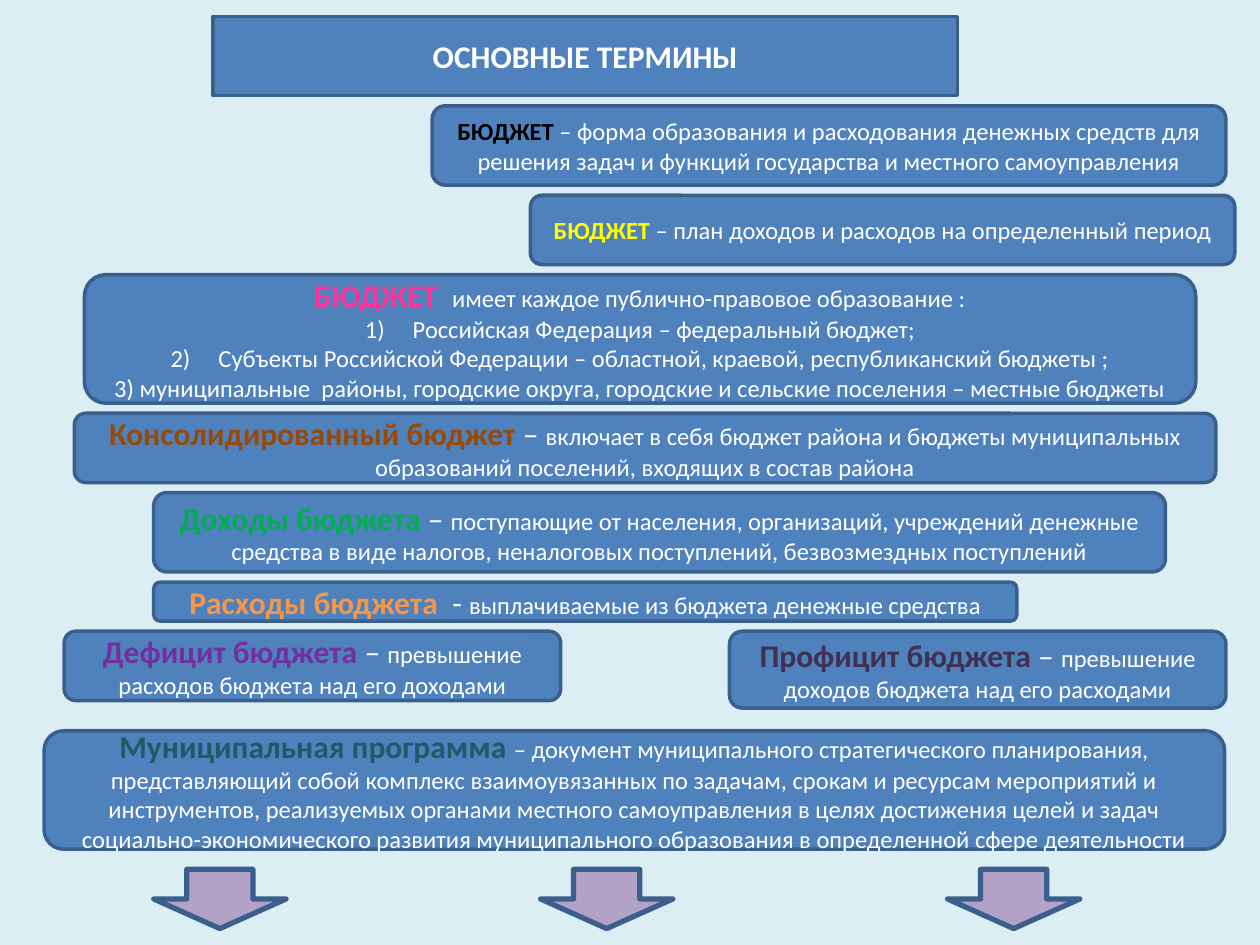
from lxml import etree
from pptx import Presentation
from pptx import util as u
from pptx.dml import color
from pptx.enum import shapes, text
from pptx.oxml import ns

HUES = {
    "back": "DBEEF4", "box": "4F81BD", "edge": "3A5F8C", "arrow": "B3A2C7",
    "white": "FFFFFF", "black": "000000", "yellow": "FFFF00", "pink": "FF3399",
    "brown": "984807", "green": "00B050", "orange": "F79646",
    "violet": "7030A0", "plum": "403152", "teal": "215968",
}

TERMS = [
    ((3.43, 0.84, 6.3, 0.63), "БЮДЖЕТ", "black", 14, "",
     " – форма образования и расходования денежных средств для решения задач "
     "и функций государства и местного самоуправления"),
    ((4.21, 1.55, 5.59, 0.55), "БЮДЖЕТ", "yellow", 14, "",
     " – план доходов и расходов на определенный период"),
    ((0.59, 3.28, 9.06, 0.55), "Консолидированный бюджет", "brown", 18, " – ",
     "включает в себя бюджет района и бюджеты муниципальных образований "
     "поселений, входящих в состав района"),
    ((1.22, 3.91, 8.03, 0.63), "Доходы бюджета ", "green", 18, "– ",
     "поступающие от населения, организаций, учреждений денежные средства "
     "в виде налогов, неналоговых поступлений, безвозмездных поступлений"),
    ((1.22, 4.62, 6.85, 0.31), "Расходы бюджета  ", "orange", 18, "- ",
     "выплачиваемые из бюджета денежные средства"),
    ((0.51, 5.01, 3.94, 0.55), "Дефицит бюджета ", "violet", 18, "– ",
     "превышение расходов бюджета над его доходами"),
    ((5.79, 5.01, 3.94, 0.61), "Профицит бюджета ", "plum", 18, "– ",
     "превышение доходов бюджета над его расходами"),
    ((0.35, 5.8, 9.37, 0.94), "Муниципальная программа ", "teal", 18, "",
     "– документ муниципального стратегического планирования, представляющий "
     "собой комплекс взаимоувязанных по задачам, срокам и ресурсам мероприятий "
     "и инструментов, реализуемых органами местного самоуправления в целях "
     "достижения целей и задач социально-экономического развития "
     "муниципального образования в определенной сфере деятельности"),
]

LEVELS = [
    ("Российская Федерация – федеральный бюджет;", True),
    ("Субъекты Российской Федерации – областной, краевой, "
     "республиканский бюджеты ;", True),
    ("3) муниципальные  районы, городские округа, городские и сельские "
     "поселения – местные бюджеты", False),
]


class Deck:
    """Hold the style and the current slide, and draw each kind of element."""

    font = "Calibri"
    frame = {"word_wrap": True, "auto_size": text.MSO_AUTO_SIZE.NONE,
             "vertical_anchor": text.MSO_ANCHOR.MIDDLE}
    para = {"alignment": text.PP_ALIGN.CENTER, "space_before": u.Pt(0)}

    def __init__(self, show):
        self.slide = show.slides.add_slide(show.slide_layouts[1])
        self.paint(self.slide.background.fill, "back")

    def apply(self, item, style):
        for name, value in style.items():
            setattr(item, name, value)

    def paint(self, fill, hue):
        fill.solid()
        fill.fore_color.rgb = color.RGBColor.from_string(HUES[hue])

    def dress(self, shape, hue, width):
        self.paint(shape.fill, hue)
        self.paint(shape.line.fill, "edge")
        shape.line.width = u.Pt(width)

    def add(self, kind, at):
        shape = self.slide.shapes.add_shape(kind, *map(u.Inches, at))
        shape.shadow.inherit = False
        return shape

    def holder(self, index, at):
        shape = self.slide.placeholders[index]
        names = ("left", "top", "width", "height")
        self.apply(shape, dict(zip(names, map(u.Inches, at))))
        geom = etree.SubElement(shape.element.spPr, ns.qn("a:prstGeom"),
                                prst="roundRect")
        etree.SubElement(geom, ns.qn("a:avLst"))
        return shape

    def box(self, shape, runs):
        self.dress(shape, "box", 2)
        self.apply(shape.text_frame, self.frame)
        self.line(shape.text_frame.paragraphs[0], runs)

    def line(self, para, runs, indent=0, number=False):
        self.apply(para, self.para)
        props = para._p.get_or_add_pPr()
        props.set("marL", str(u.Inches(indent)))
        props.set("indent", str(u.Inches(-indent)))
        if number:
            etree.SubElement(props, ns.qn("a:buAutoNum"), type="arabicParenR")
        else:
            etree.SubElement(props, ns.qn("a:buNone"))
        for words, size, hue, bold in runs:
            run = para.add_run()
            run.text = words
            self.apply(run.font, {"name": self.font, "size": u.Pt(size),
                                  "bold": bold})
            self.paint(run.font.fill, hue)

    def title(self, at, words):
        self.box(self.holder(0, at), [(words, 18, "white", True)])

    def items(self, at, head, rows):
        shape = self.holder(1, at)
        self.box(shape, head)
        for words, number in rows:
            self.line(shape.text_frame.add_paragraph(),
                      [(words, 14, "white", False)], 0.38, number)

    def term(self, at, name, hue, size, dash, rest):
        runs = [(name, size, hue, True), (dash, 18, "white", False),
                (rest, 14, "white", False)]
        self.box(self.add(shapes.MSO_SHAPE.ROUNDED_RECTANGLE, at),
                 [run for run in runs if run[0]])

    def arrow(self, left):
        shape = self.add(shapes.MSO_SHAPE.DOWN_ARROW, (left, 6.9, 1.05, 0.47))
        self.dress(shape, "arrow", 3)


def main():
    show = Presentation()
    show.slide_width, show.slide_height = u.Inches(10), u.Inches(7.5)
    deck = Deck(show)
    deck.title((1.69, 0.13, 5.91, 0.63), "ОСНОВНЫЕ ТЕРМИНЫ")
    deck.items((0.67, 2.18, 8.82, 1.02),
               [("БЮДЖЕТ  ", 18, "pink", True),
                ("имеет каждое публично-правовое образование :",
                 14, "white", False)], LEVELS)
    for term in TERMS:
        deck.term(*term)
    for left in (1.22, 4.29, 7.52):
        deck.arrow(left)
    show.save("out.pptx")


if __name__ == "__main__":
    main()
